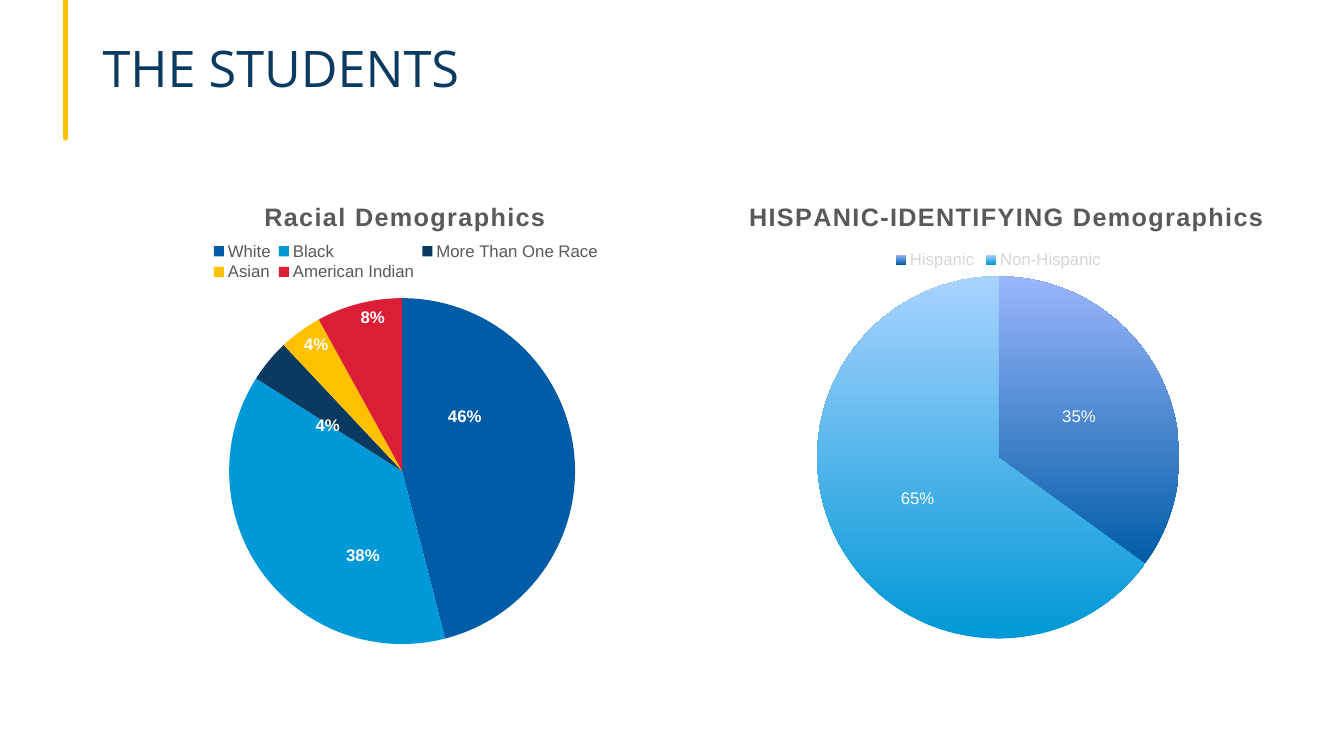
import pptx
import pptx.chart.data
import pptx.dml.color
import pptx.enum.chart
import pptx.enum.shapes
import pptx.oxml
import pptx.oxml.ns
import pptx.util
from lxml import etree

Pt = pptx.util.Pt
qn = pptx.oxml.ns.qn
LABEL = pptx.enum.chart.XL_LABEL_POSITION
LEGEND = pptx.enum.chart.XL_LEGEND_POSITION

COLORS = {
    "white": "FFFFFF",
    "navy": "0A3A5F",
    "gold": "FFC000",
    "gray": "595959",
    "silver": "D4D6D7",
    "blue": "005CA6",
    "sky": "0098D6",
    "red": "DB1E35",
    "pale_blue": "9AB5FB",
    "pale_sky": "A9D3FF",
}

RACIAL = {
    "title": "Racial Demographics",
    "values": {"White": 46, "Black": 38, "More Than One Race": 4, "Asian": 4, "American Indian": 8},
    "fills": [["blue"], ["sky"], ["navy"], ["gold"], ["red"]],
    "legend_color": "gray",
    "legend_position": LEGEND.TOP,
    "label_position": LABEL.INSIDE_END,
    "label_bold": True,
    "label_shifts": [(-0.03, -0.09), (0.04, 0.07), (-0.01, 0.02)],
    "title_layout": (0.31, 0.05),
    "legend_layout": (0.24, 0.14, 0.52, 0.09),
    "plot_layout": (0.27, 0.26, 0.45, 0.71),
}

HISPANIC = {
    "title": "HISPANIC-IDENTIFYING Demographics",
    "values": {"Hispanic": 35, "Non-Hispanic": 65},
    "fills": [["blue", "pale_blue"], ["sky", "pale_sky"]],
    "legend_color": "silver",
    "legend_position": LEGEND.BOTTOM,
    "label_position": LABEL.CENTER,
    "label_bold": False,
    "label_shifts": [],
    "title_layout": (0.11, 0.05),
    "legend_layout": (0.33, 0.16, 0.33, 0.05),
    "plot_layout": (0.22, 0.22, 0.55, 0.76),
}


def rgb(name):
    return pptx.dml.color.RGBColor.from_string(COLORS[name])


def set_attributes(target, values):
    for name, value in values.items():
        setattr(target, name, value)


def format_font(font, color, size, bold=False, name="Arial"):
    set_attributes(font, {"name": name, "size": Pt(size), "bold": bold})
    font.color.rgb = rgb(color)


def set_layout(parent, index, numbers, absolute=True, inner=False):
    for old in parent.findall(qn("c:layout")):
        parent.remove(old)
    layout = etree.Element(qn("c:layout"))
    manual = etree.SubElement(layout, qn("c:manualLayout"))
    entries = [("layoutTarget", "inner")] if inner else []
    if absolute:
        entries += [("xMode", "edge"), ("yMode", "edge")]
    entries += zip("xywh", numbers)
    for tag, value in entries:
        etree.SubElement(manual, qn("c:" + tag)).set("val", str(value))
    parent.insert(index, layout)


def add_header(slide, left, top, width, height):
    accent = slide.shapes.add_connector(
        pptx.enum.shapes.MSO_CONNECTOR.STRAIGHT,
        Pt(left - 19.5), Pt(top - 37.5), Pt(left - 19.5), Pt(top + 70.5))
    accent.line.color.rgb = rgb("gold")
    accent.line.width = Pt(4)
    accent.line._get_or_add_ln().set("cap", "rnd")
    etree.SubElement(accent._element.spPr, qn("a:effectLst"))

    heading = slide.shapes.add_textbox(Pt(left), Pt(top), Pt(width), Pt(height))
    heading.text_frame.word_wrap = True
    paragraph = heading.text_frame.paragraphs[0]
    paragraph.line_spacing = 0.9
    run = paragraph.add_run()
    run.text = "THE STUDENTS"
    format_font(run.font, "navy", 36, name="Open Sans")


def add_chart_title(chart, design):
    chart.has_title = True
    paragraph = chart.chart_title.text_frame.paragraphs[0]
    run = paragraph.add_run()
    run.text = design["title"]
    format_font(run.font, "gray", 18, True)
    run._r.get_or_add_rPr().set("spc", "100")
    set_layout(chart.chart_title._element, 1, design["title_layout"])


def add_chart_legend(chart, design):
    chart.has_legend = True
    set_attributes(chart.legend, {"position": design["legend_position"], "include_in_layout": False})
    format_font(chart.legend.font, design["legend_color"], 12)
    set_layout(chart.legend._element, 1, design["legend_layout"])


def fill_slice(fill, names):
    if len(names) == 1:
        fill.solid()
        fill.fore_color.rgb = rgb(names[0])
        return
    fill.gradient()
    fill.gradient_angle = 90
    for stop, name, position in zip(fill.gradient_stops, names, (0, 1)):
        stop.color.rgb = rgb(name)
        stop.position = position


def add_labels(series, design):
    labels = series.data_labels
    set_attributes(labels, {
        "show_percentage": True,
        "show_value": False,
        "number_format": "0%",
        "number_format_is_linked": False,
        "position": design["label_position"],
    })
    format_font(labels.font, "white", 12, design["label_bold"])
    for index, shift in enumerate(design["label_shifts"]):
        label = series.points[index].data_label
        format_font(label.font, "white", 12, design["label_bold"])
        label.position = LABEL.CENTER
        element = labels._element.findall(qn("c:dLbl"))[index]
        element.find(qn("c:showVal")).set("val", "0")
        element.find(qn("c:showPercent")).set("val", "1")
        set_layout(element, 1, shift, absolute=False)


def add_pie(slide, design, left, top, width, height):
    data = pptx.chart.data.CategoryChartData()
    data.categories = list(design["values"])
    data.add_series("Series 1", list(design["values"].values()))
    chart = slide.shapes.add_chart(
        pptx.enum.chart.XL_CHART_TYPE.PIE,
        Pt(left), Pt(top), Pt(width), Pt(height), data).chart
    set_attributes(chart.font, {"name": "Arial", "size": Pt(10)})
    add_chart_title(chart, design)
    add_chart_legend(chart, design)

    plot = chart.plots[0]
    plot.vary_by_categories = True
    series = plot.series[0]
    for index, names in enumerate(design["fills"]):
        slice_format = series.points[index].format
        fill_slice(slice_format.fill, names)
        slice_format.line.fill.background()
    add_labels(series, design)
    plot_area = chart._chartSpace.chart.plotArea
    set_layout(plot_area, 0, design["plot_layout"], inner=True)


def main():
    presentation = pptx.Presentation()
    set_attributes(presentation, {"slide_width": Pt(960), "slide_height": Pt(540)})
    slide = presentation.slides.add_slide(presentation.slide_layouts[6])
    add_header(slide, 66.25, 28, 828, 72)
    add_pie(slide, RACIAL, 15, 122.5, 550, 348)
    add_pie(slide, HISPANIC, 480, 122.5, 471, 340.5)
    presentation.save("out.pptx")


if __name__ == "__main__":
    main()
